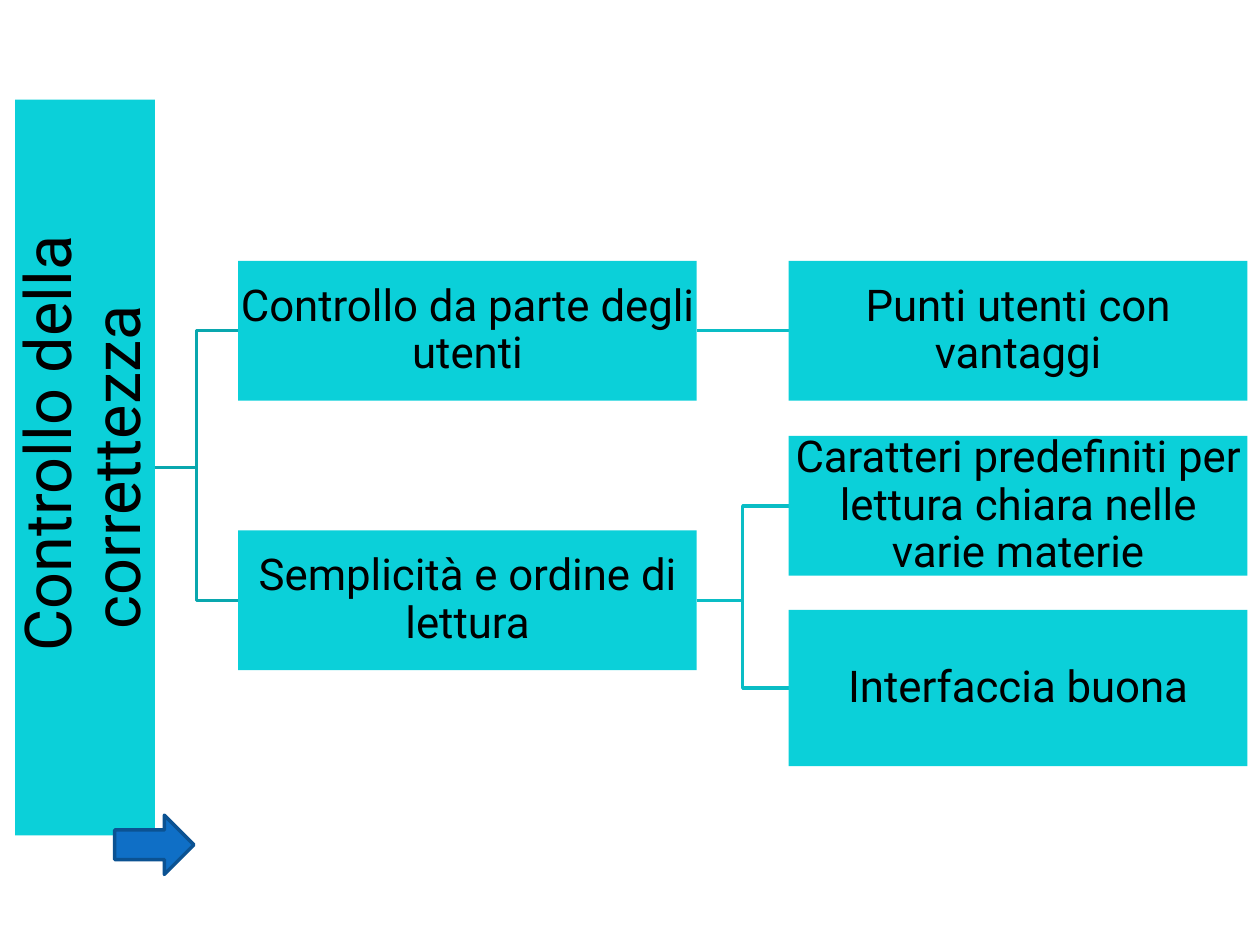
import dataclasses

import pptx
import pptx.dml.color
import pptx.enum.shapes
import pptx.enum.text
import pptx.oxml
import pptx.util
from pptx.util import Inches


@dataclasses.dataclass(frozen=True)
class Theme:
    """Colours, font and sizes of the slide."""
    node: str = "0BD0D9"
    root_link: str = "09A7AE"
    branch_link: str = "0ABDC5"
    arrow: str = "0F6FC6"
    arrow_edge: str = "0B5292"
    ink: str = "000000"
    font: str = "Roboto"
    root_size: float = 37
    node_size: float = 25
    line_width: float = 2


@dataclasses.dataclass(frozen=True)
class Box:
    """A rectangle in inches."""
    left: float
    top: float
    width: float
    height: float

    @property
    def middle(self):
        """Return the vertical centre."""
        return self.top + self.height / 2

    @property
    def right(self):
        """Return the right edge."""
        return self.left + self.width

    def lengths(self):
        """Return left, top, width and height as lengths."""
        return [Inches(value) for value in dataclasses.astuple(self)]


THEME = Theme()
ROOT_BOX = Box(0.12, 0.79, 1.11, 5.84)
NODE_WIDTH, NODE_HEIGHT = 3.64, 1.11
BRANCH_LEFT, LEAF_LEFT = 1.89, 6.26
BRANCHES = [
    ("Controllo da parte degli utenti", 2.07,
     [("Punti utenti con vantaggi", 2.07, NODE_HEIGHT)]),
    ("Semplicità e ordine di lettura", 4.21,
     [("Caratteri predefiniti per lettura chiara nelle varie materie", 3.46, NODE_HEIGHT),
      ("Interfaccia buona", 4.84, 1.24)]),
]


def colour(code):
    """Turn a hex code into a colour."""
    return pptx.dml.color.RGBColor.from_string(code)


def add_solid(page, kind, box, fill, edge=None):
    """Add a flat preset shape."""
    shape = page.shapes.add_shape(kind, *box.lengths())
    shape.shadow.inherit = False
    shape.fill.solid()
    shape.fill.fore_color.rgb = colour(fill)
    if edge:
        shape.line.color.rgb = colour(edge)
        shape.line.width = pptx.util.Pt(THEME.line_width)
    else:
        shape.line.fill.background()
    return shape


def write_text(shape, text, size, inset=0.02, indent=0):
    """Write one centred paragraph into a shape."""
    frame = shape.text_frame
    frame.word_wrap = True
    frame.vertical_anchor = pptx.enum.text.MSO_ANCHOR.MIDDLE
    frame.margin_left = frame.margin_right = Inches(inset)
    frame.margin_top = frame.margin_bottom = Inches(inset)
    para = frame.paragraphs[0]
    para.alignment = pptx.enum.text.PP_ALIGN.CENTER
    para.line_spacing = 0.9
    if indent:
        para._p.get_or_add_pPr().set("indent", str(Inches(indent)))
    span = para.add_run()
    span.text = text
    span.font.name = THEME.font
    span.font.size = pptx.util.Pt(size)
    span.font.color.rgb = colour(THEME.ink)


def add_link(page, start, end, line_colour):
    """Join the right side of one box to the left side of another."""
    kinds = pptx.enum.shapes.MSO_CONNECTOR
    level = abs(start.middle - end.middle) < 0.01
    link = page.shapes.add_connector(
        kinds.STRAIGHT if level else kinds.ELBOW,
        Inches(start.right), Inches(start.middle),
        Inches(end.left), Inches(end.middle))
    link.line.color.rgb = colour(line_colour)
    link.line.width = pptx.util.Pt(THEME.line_width)
    properties = link._element.spPr
    properties.append(properties.makeelement(pptx.oxml.ns.qn("a:effectLst"), {}))


def add_root(page, box):
    """Add the upright root bar with text reading upwards."""
    turned = Box(box.left + (box.width - box.height) / 2,
                 box.middle - box.width / 2, box.height, box.width)
    shape = add_solid(page, pptx.enum.shapes.MSO_SHAPE.RECTANGLE, turned, THEME.node)
    shape.rotation = 270
    write_text(shape, "Controllo della correttezza", THEME.root_size, inset=0.03, indent=0.38)


def add_node(page, box, text):
    """Add a labelled rectangle."""
    shape = add_solid(page, pptx.enum.shapes.MSO_SHAPE.RECTANGLE, box, THEME.node)
    write_text(shape, text, THEME.node_size)


def add_tree(page, root_box):
    """Add the root, its branches and their leaves."""
    add_root(page, root_box)
    for branch_text, branch_top, leaves in BRANCHES:
        branch_box = Box(BRANCH_LEFT, branch_top, NODE_WIDTH, NODE_HEIGHT)
        add_link(page, root_box, branch_box, THEME.root_link)
        add_node(page, branch_box, branch_text)
        for leaf_text, leaf_top, leaf_height in leaves:
            leaf_box = Box(LEAF_LEFT, leaf_top, NODE_WIDTH, leaf_height)
            add_link(page, branch_box, leaf_box, THEME.branch_link)
            add_node(page, leaf_box, leaf_text)


def add_arrow(page, box):
    """Add the block arrow below the root."""
    add_solid(page, pptx.enum.shapes.MSO_SHAPE.RIGHT_ARROW, box,
              THEME.arrow, THEME.arrow_edge)


def main():
    """Build the slide and save it."""
    deck = pptx.Presentation()
    deck.slide_width, deck.slide_height = Inches(10), Inches(7.5)
    page = deck.slides.add_slide(deck.slide_layouts[6])
    add_tree(page, ROOT_BOX)
    add_arrow(page, Box(0.91, 6.47, 0.63, 0.47))
    deck.save("out.pptx")


if __name__ == "__main__":
    main()
